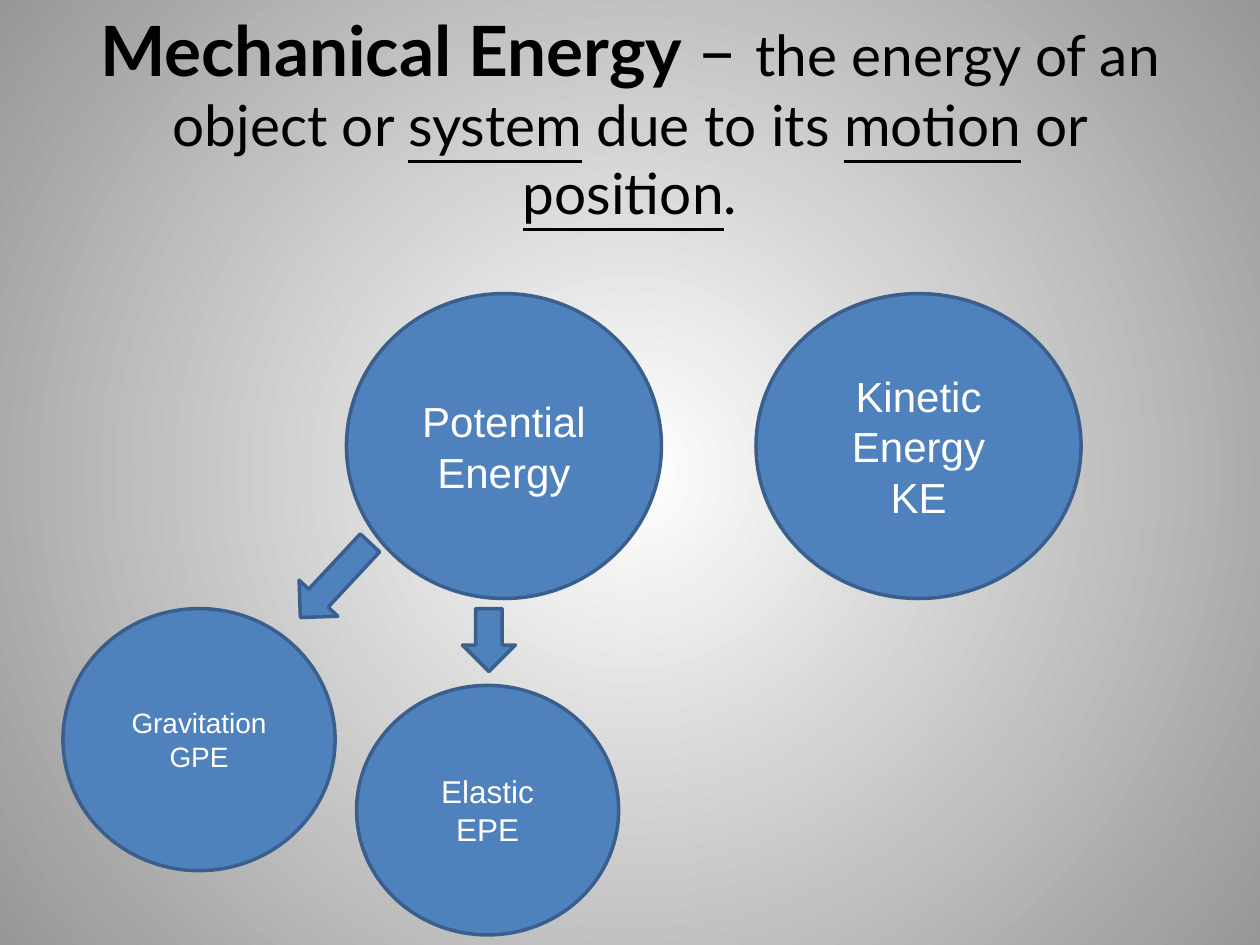
from lxml.etree import SubElement
from pptx import Presentation
from pptx.dml.color import RGBColor
from pptx.enum.shapes import MSO_SHAPE
from pptx.enum.text import MSO_ANCHOR, MSO_AUTO_SIZE, PP_ALIGN
from pptx.oxml.ns import qn
from pptx.util import Inches, Pt

BLUE, OUTLINE, WHITE, BLACK = "4F81BD", "3A5F8C", "FFFFFF", "000000"


def color(hex_code):
    """Return the colour for a hex string."""
    return RGBColor.from_string(hex_code)


def add_run(paragraph, text, size, font, hex_code, bold=False, underline=False):
    """Append one formatted run to a paragraph."""
    run = paragraph.add_run()
    run.text = text
    run.font.size = Pt(size)
    run.font.name = font
    run.font.bold = bold
    run.font.underline = underline
    run.font.color.rgb = color(hex_code)


def set_background(slide, center, edge):
    """Fill the background with a circular gradient from center to edge."""
    fill = slide.background.fill
    fill.gradient()
    for stop, position, hex_code in zip(fill.gradient_stops, (0, 1), (center, edge)):
        stop.position = position
        stop.color.rgb = color(hex_code)
    linear = next(slide.background._cSld.iter(qn("a:lin")))
    gradient = linear.getparent()
    gradient.remove(linear)
    circle = SubElement(gradient, qn("a:path"), path="circle")
    sides = dict.fromkeys("ltrb", "50000")
    SubElement(circle, qn("a:fillToRect"), **sides)


def place_title(slide, box):
    """Write the definition into the title placeholder."""
    title = slide.shapes.title
    title.left, title.top, title.width, title.height = map(Inches, box)
    frame = title.text_frame
    frame.word_wrap = True
    frame.auto_size = MSO_AUTO_SIZE.NONE
    frame.vertical_anchor = MSO_ANCHOR.MIDDLE
    paragraph = frame.paragraphs[0]
    paragraph.alignment = PP_ALIGN.CENTER
    add_run(paragraph, "Mechanical Energy ", 39.6, "Lato", BLACK, bold=True)
    add_run(paragraph, "– ", 39.6, "Lato", BLACK)
    definition = ("the energy of an object or ", "system", " due to its ",
                  "motion", " or ", "position", ".")
    for index, text in enumerate(definition):
        add_run(paragraph, text, 32.4, "Lato", BLACK, underline=index % 2 == 1)


def add_blue_shape(slide, kind, box):
    """Add a blue outlined preset shape in the box."""
    shape = slide.shapes.add_shape(kind, *map(Inches, box))
    shape.shadow.inherit = False
    shape.fill.solid()
    shape.fill.fore_color.rgb = color(BLUE)
    shape.line.color.rgb = color(OUTLINE)
    shape.line.width = Pt(2)
    return shape


def add_energy_circle(slide, box, lines, size):
    """Add a circle naming one form of energy."""
    frame = add_blue_shape(slide, MSO_SHAPE.OVAL, box).text_frame
    frame.word_wrap = True
    frame.vertical_anchor = MSO_ANCHOR.MIDDLE
    for index, text in enumerate(lines):
        paragraph = frame.add_paragraph() if index else frame.paragraphs[0]
        paragraph.alignment = PP_ALIGN.CENTER
        add_run(paragraph, text, size, "Arial", WHITE)


def add_arrow(slide, box, rotation=0):
    """Add a block arrow pointing down, turned by the rotation."""
    add_blue_shape(slide, MSO_SHAPE.DOWN_ARROW, box).rotation = rotation


def main():
    """Build and save the slide."""
    presentation = Presentation()
    presentation.slide_width, presentation.slide_height = Inches(10), Inches(7.5)
    slide = presentation.slides.add_slide(presentation.slide_layouts[5])
    set_background(slide, WHITE, "979797")
    place_title(slide, (0.5, 0.3, 9, 1.25))
    add_energy_circle(slide, (2.75, 2.33, 2.5, 2.42), ["Potential Energy"], 24)
    add_energy_circle(slide, (6, 2.33, 2.58, 2.42), ["Kinetic Energy", "KE"], 24)
    add_arrow(slide, (3.67, 4.83, 0.42, 0.5))
    add_arrow(slide, (2.45, 4.2, 0.42, 0.81), rotation=43)
    add_energy_circle(slide, (0.5, 4.83, 2.16, 2.08), ["Gravitation GPE"], 16)
    add_energy_circle(slide, (2.83, 5.44, 2.08, 1.98), ["Elastic EPE"], 18)
    presentation.save("out.pptx")


if __name__ == "__main__":
    main()
